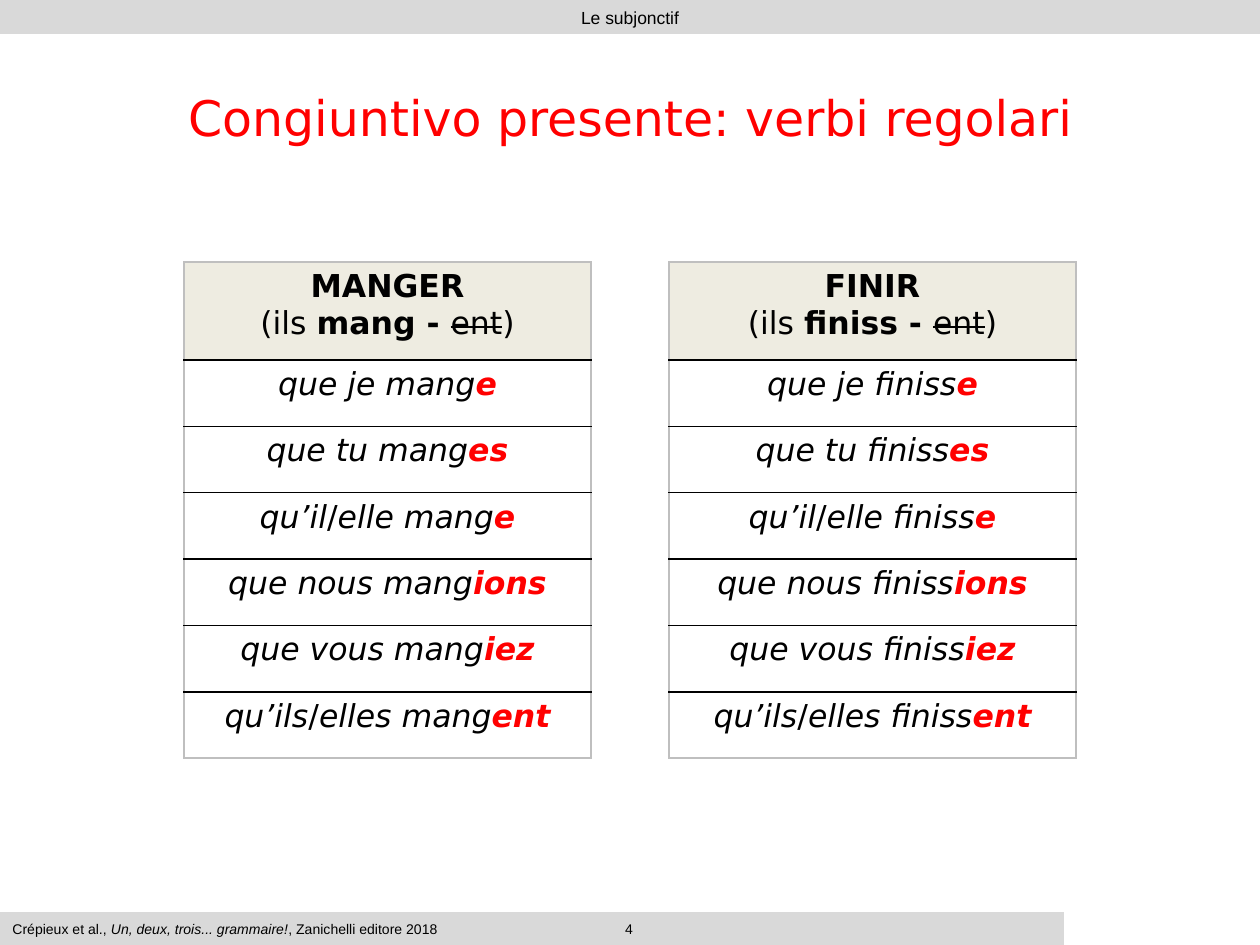
from dataclasses import dataclass

from lxml import etree
from pptx import Presentation
from pptx.dml.color import RGBColor
from pptx.enum.shapes import MSO_SHAPE
from pptx.enum.text import MSO_ANCHOR, PP_ALIGN
from pptx.oxml.ns import qn
from pptx.util import Pt

RECTANGLE = MSO_SHAPE.RECTANGLE
MIDDLE = MSO_ANCHOR.MIDDLE
CENTER, LEFT = PP_ALIGN.CENTER, PP_ALIGN.LEFT
PX = 914400 / 126


@dataclass(frozen=True)
class Theme:
    black: str = "000000"
    red: str = "FF0000"
    white: str = "FFFFFF"
    bar: str = "D9D9D9"
    heading_fill: str = "EEECE1"
    outline: str = "BFBFBF"
    bar_font: str = "Arial"
    body_font: str = "DejaVu Sans"
    title_size: int = 28
    body_size: int = 18
    header_size: int = 10
    footer_size: int = 8


THEME = Theme()


def box(*lengths):
    """Turn px lengths into EMU."""
    return [round(length * PX) for length in lengths]


def write(paragraph, text, *, size=THEME.body_size, font=THEME.body_font,
          color=THEME.black, bold=False, italic=False, strike=False, align=CENTER):
    paragraph.alignment = align
    run = paragraph.add_run()
    run.text = text
    run.font.size = Pt(size)
    run.font.name = font
    run.font.bold = bold
    run.font.italic = italic
    run.font.color.rgb = RGBColor.from_string(color)
    if strike:
        run.font.strikethrough = True
        run._r.get_or_add_rPr().set("strike", "sngStrike")


prs = Presentation()
prs.slide_width, prs.slide_height = box(1260, 945)
slide = prs.slides.add_slide(prs.slide_layouts[5])

title = slide.shapes.title
title.left, title.top, title.width, title.height = box(63, 38, 1134, 157)
title.text_frame.vertical_anchor = MIDDLE
write(title.text_frame.paragraphs[0], "Congiuntivo presente: verbi regolari",
      size=THEME.title_size, color=THEME.red)

# Bars: place, type size, alignment, (text, italic) parts
bars = [
    ((0, 0, 1260, 34), THEME.header_size, CENTER, [("Le subjonctif", False)]),
    ((0, 912, 1064, 33), THEME.footer_size, LEFT,
     [("Crépieux et al., ", False), ("Un, deux, trois... grammaire!", True),
      (", Zanichelli editore 2018", False)]),
    ((486, 912, 286, 33), THEME.footer_size, CENTER, [("4", False)]),
]
for place, size, align, parts in bars:
    bar = slide.shapes.add_shape(RECTANGLE, *box(*place))
    bar.shadow.inherit = False
    bar.fill.solid()
    bar.fill.fore_color.rgb = RGBColor.from_string(THEME.bar)
    bar.line.fill.background()
    bar.text_frame.vertical_anchor = MIDDLE
    for text, italic in parts:
        write(bar.text_frame.paragraphs[0], text, size=size, font=THEME.bar_font,
              italic=italic, align=align)

# A slash in a pronoun is set upright
forms = [("que je ", "e"), ("que tu ", "es"), ("qu’il/elle ", "e"),
         ("que nous ", "ions"), ("que vous ", "iez"), ("qu’ils/elles ", "ent")]
row_heights = [98] + [66.4] * len(forms)
TABLE_TOP, TABLE_WIDTH = 262, 407

for table_left, verb, stem in [(184, "MANGER", "mang"), (669, "FINIR", "finiss")]:
    frame = slide.shapes.add_table(
        len(row_heights), 1, *box(table_left, TABLE_TOP, TABLE_WIDTH, sum(row_heights)))
    table = frame.table
    table.first_row = table.horz_banding = False
    for row, height in zip(table.rows, row_heights):
        row.height = box(height)[0]

    heading = table.cell(0, 0).text_frame.paragraphs[0]
    write(heading, verb, bold=True)
    heading.add_line_break()
    write(heading, "(ils ")
    write(heading, f"{stem} - ", bold=True)
    write(heading, "ent", strike=True)
    write(heading, ")")

    for index, (pronoun, ending) in enumerate(forms, start=1):
        line = table.cell(index, 0).text_frame.paragraphs[0]
        before, slash, after = (pronoun + stem).partition("/")
        write(line, before, italic=True)
        if slash:
            write(line, slash)
            write(line, after, italic=True)
        write(line, ending, color=THEME.red, bold=True, italic=True)

    for index in range(len(row_heights)):
        cell = table.cell(index, 0)
        properties = cell._tc.get_or_add_tcPr()
        top = THEME.outline if index == 0 else THEME.black
        bottom = THEME.outline if index == len(forms) else THEME.black
        for side, color in [("L", THEME.outline), ("R", THEME.outline),
                            ("T", top), ("B", bottom)]:
            border = etree.SubElement(properties, qn(f"a:ln{side}"), w=str(Pt(1)))
            border_fill = etree.SubElement(border, qn("a:solidFill"))
            etree.SubElement(border_fill, qn("a:srgbClr"), val=color)
        cell.fill.solid()
        cell.fill.fore_color.rgb = RGBColor.from_string(
            THEME.heading_fill if index == 0 else THEME.white)

prs.save("out.pptx")
